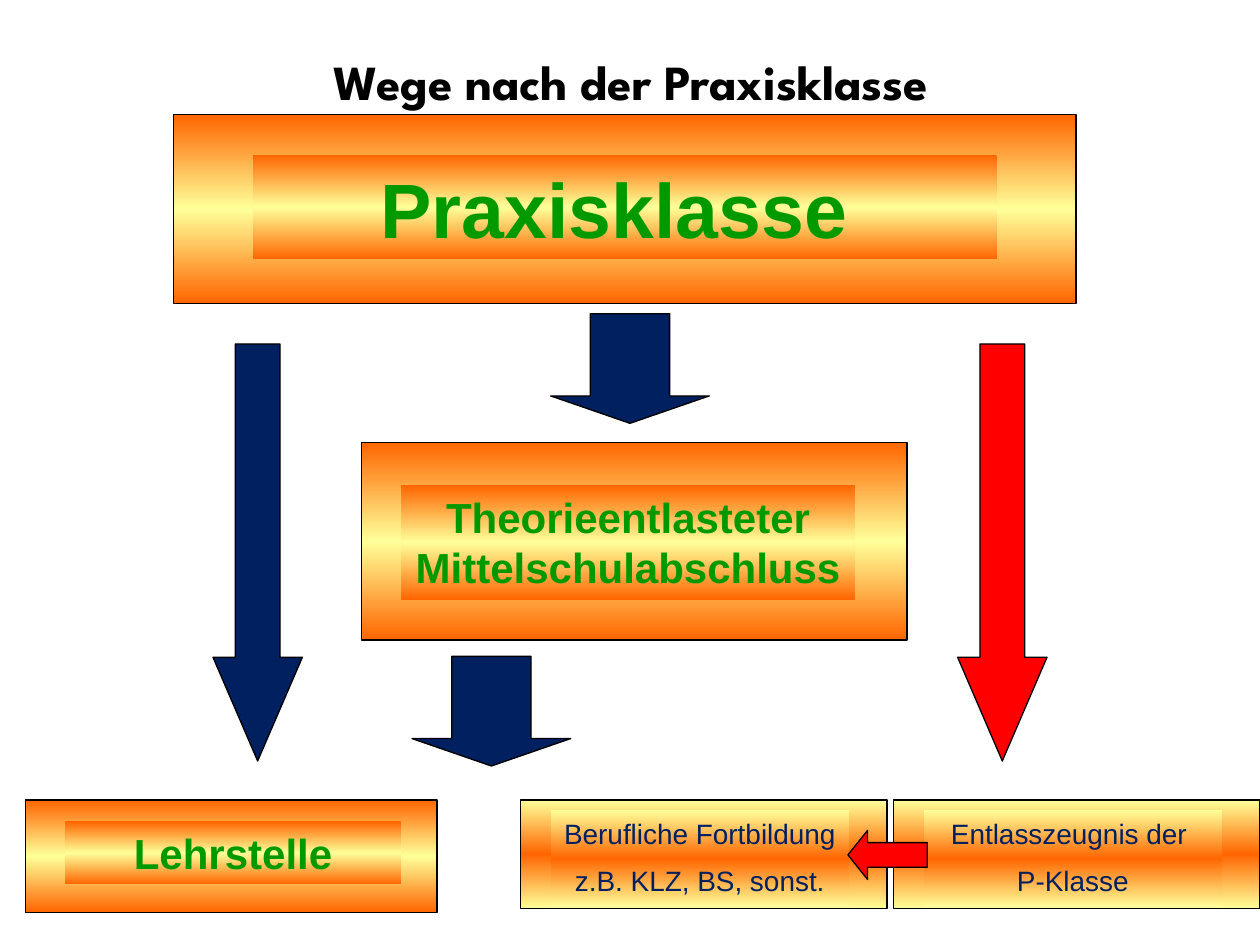
import lxml.etree
import pptx
import pptx.dml.color
import pptx.enum.shapes
import pptx.enum.text
import pptx.oxml.ns
import pptx.util
from pptx.util import Inches

ORANGE, YELLOW = "FF6600", "FFFF99"
GREEN, NAVY, RED, BLACK = "009900", "002060", "FF0000", "000000"
WARM_EDGES = (ORANGE, YELLOW, ORANGE)
WARM_CENTRE = (YELLOW, ORANGE, YELLOW)
ARROWS = pptx.enum.shapes.MSO_SHAPE


def color(value):
    """Turn a hex string into a colour."""
    return pptx.dml.color.RGBColor.from_string(value)


def fill_gradient(shape, colors):
    """Fill a shape with evenly spaced colours from top to bottom."""
    shape.fill.gradient()
    shape.fill.gradient_angle = 90
    qualified = pptx.oxml.ns.qn
    stops = shape._element.spPr.find(".//" + qualified("a:gsLst"))
    for stop in list(stops):
        stops.remove(stop)
    for index, value in enumerate(colors):
        position = str(100000 * index // (len(colors) - 1))
        stop = lxml.etree.SubElement(stops, qualified("a:gs"), pos=position)
        lxml.etree.SubElement(stop, qualified("a:srgbClr"), val=value)


def outline(shape):
    """Give a shape a thin black line."""
    shape.line.color.rgb = color(BLACK)
    shape.line.width = pptx.util.Pt(0.75)


def write(shape, lines, font_name, size, value, bold):
    """Write centred paragraphs with half a line between them."""
    frame = shape.text_frame
    frame.word_wrap = True
    frame.vertical_anchor = pptx.enum.text.MSO_ANCHOR.TOP
    frame.text = "\n".join(lines)
    for index, paragraph in enumerate(frame.paragraphs):
        paragraph.alignment = pptx.enum.text.PP_ALIGN.CENTER
        paragraph.space_before = pptx.util.Pt(size * 0.5 if index else 0)
        paragraph.font.name = font_name
        paragraph.font.size = pptx.util.Pt(size)
        paragraph.font.bold = bold
        paragraph.font.color.rgb = color(value)


def add_title(slide, left, top, width, height):
    """Place and format the slide title."""
    title = slide.shapes.title
    title.left, title.top = Inches(left), Inches(top)
    title.width, title.height = Inches(width), Inches(height)
    write(title, ["Wege nach der Praxisklasse"], "League Spartan", 28, BLACK, True)


def add_station(slide, box, label_box, colors, lines, size, value, bold):
    """Group a framed panel with a label placed relative to its corner."""
    left, top, width, height = box
    inset_left, inset_top, label_width, label_height = label_box
    shapes = slide.shapes.add_group_shape().shapes
    rectangle = pptx.enum.shapes.MSO_SHAPE.RECTANGLE
    panel = shapes.add_shape(
        rectangle, Inches(left), Inches(top), Inches(width), Inches(height))
    label = shapes.add_shape(
        rectangle, Inches(left + inset_left), Inches(top + inset_top),
        Inches(label_width), Inches(label_height))
    for shape in (panel, label):
        shape.shadow.inherit = False
        fill_gradient(shape, colors)
    outline(panel)
    label.line.fill.background()
    write(label, lines, "Arial", size, value, bold)


def add_arrow(slide, kind, box, head, value):
    """Add a block arrow with the given head length ratio."""
    arrow = slide.shapes.add_shape(kind, *(Inches(length) for length in box))
    arrow.adjustments[0] = 0.5
    arrow.adjustments[1] = head
    arrow.shadow.inherit = False
    arrow.fill.solid()
    arrow.fill.fore_color.rgb = color(value)
    outline(arrow)


def add_stations(slide):
    """Add the class, the degree and the three outcomes."""
    main_stations = [
        ((1.38, 0.91, 7.16, 1.5), (0.63, 0.32, 5.9, 0.83), "Praxisklasse ", 44),
        ((0.2, 6.35, 3.27, 0.89), (0.32, 0.17, 2.66, 0.5), "Lehrstelle", 24),
        ((2.87, 3.51, 4.33, 1.57), (0.31, 0.34, 3.61, 0.91),
         "Theorieentlasteter Mittelschulabschluss", 24),
    ]
    for box, label_box, text, size in main_stations:
        add_station(slide, box, label_box, WARM_EDGES, [text], size, GREEN, True)
    side_stations = [
        (7.09, ["Entlasszeugnis der ", "P-Klasse"]),
        (4.13, ["Berufliche Fortbildung", "z.B. KLZ, BS, sonst."]),
    ]
    for left, lines in side_stations:
        add_station(slide, (left, 6.35, 2.91, 0.86), (0.24, 0.08, 2.37, 0.77),
                    WARM_CENTRE, lines, 16, NAVY, False)


def add_arrows(slide):
    """Add the arrows between the stations."""
    for left, value in ((1.69, NAVY), (7.6, RED)):
        add_arrow(slide, ARROWS.DOWN_ARROW, (left, 2.73, 0.71, 3.31), 1.16, value)
    add_arrow(slide, ARROWS.LEFT_ARROW, (6.73, 6.59, 0.63, 0.39), 0.4, RED)
    for left, top in ((4.37, 2.49), (3.27, 5.21)):
        add_arrow(slide, ARROWS.DOWN_ARROW, (left, top, 1.26, 0.87), 0.25, NAVY)


def main():
    """Build and save the presentation."""
    presentation = pptx.Presentation()
    presentation.slide_width, presentation.slide_height = Inches(10), Inches(7.5)
    slide = presentation.slides.add_slide(presentation.slide_layouts[5])
    add_title(slide, 1.46, 0.36, 7.09, 0.57)
    add_stations(slide)
    add_arrows(slide)
    presentation.save("out.pptx")


if __name__ == "__main__":
    main()
